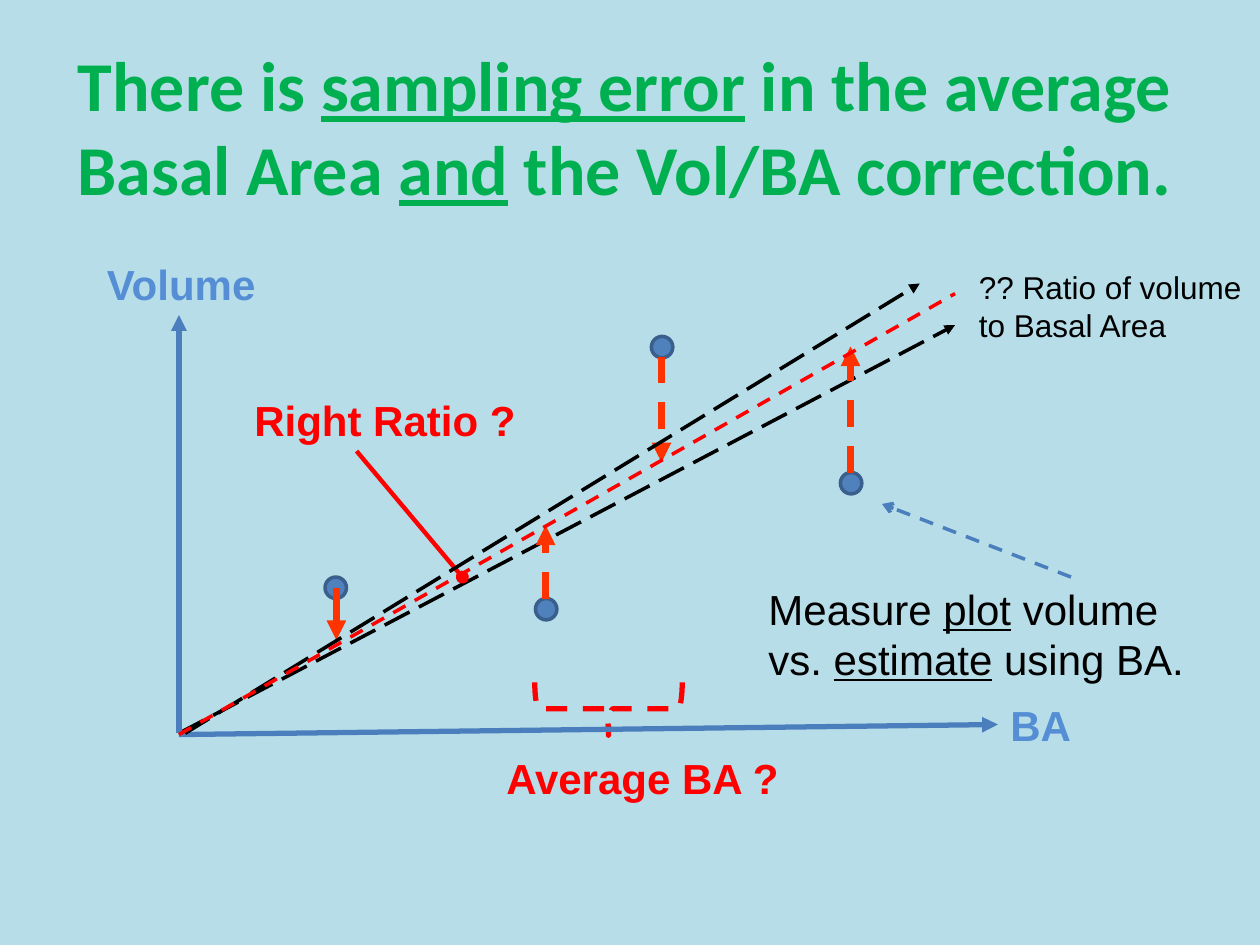
import pptx
import pptx.util
import pptx.dml.color
import pptx.enum.dml
import pptx.enum.shapes
import pptx.enum.text
import pptx.oxml.ns
import lxml.etree

Inches = pptx.util.Inches
Pt = pptx.util.Pt
Dash = pptx.enum.dml.MSO_LINE
Shape = pptx.enum.shapes.MSO_SHAPE
Align = pptx.enum.text.PP_ALIGN
Anchor = pptx.enum.text.MSO_ANCHOR
rgb = pptx.dml.color.RGBColor.from_string
qn = pptx.oxml.ns.qn

theme = {
    "back": rgb("B7DEE8"), "title": rgb("00B050"), "label": rgb("558ED5"),
    "axis": rgb("4B7EBC"), "dot": rgb("4F81BD"), "rim": rgb("3A5F8C"),
    "error": rgb("FF3300"), "red": rgb("FF0000"), "black": rgb("000000"),
    "head": Pt(40), "body": Pt(24), "small": Pt(18),
}

deck = pptx.Presentation()
deck.slide_width, deck.slide_height = Inches(10), Inches(7.5)
slide = deck.slides.add_slide(deck.slide_layouts[6])
slide.background.fill.solid()
slide.background.fill.fore_color.rgb = theme["back"]


def add_text(text, box, size="body", color="black", bold=False, font="Arial",
             align=Align.LEFT, anchor=Anchor.TOP):
    frame = slide.shapes.add_textbox(*map(Inches, box)).text_frame
    frame.word_wrap = True
    frame.vertical_anchor = anchor
    para = frame.paragraphs[0]
    para.alignment = align
    for row, line in enumerate(text.split("\n")):
        if row:
            para.add_line_break()
        for i, part in enumerate(line.split("_")):
            if part:
                run = para.add_run()
                run.text = part
                run.font.name = font
                run.font.size = theme[size]
                run.font.color.rgb = theme[color]
                run.font.bold = bold
                run.font.underline = i % 2 == 1


def add_line(start, end, color, width, dash=None, tip=None):
    line = slide.shapes.add_connector(
        pptx.enum.shapes.MSO_CONNECTOR.STRAIGHT, *map(Inches, start + end))
    line.line.color.rgb = theme[color]
    line.line.width = Pt(width)
    if dash:
        line.line.dash_style = dash
    if tip:
        lxml.etree.SubElement(line.line._get_or_add_ln(), qn("a:tailEnd"), type=tip)
    lxml.etree.SubElement(line._element.spPr, qn("a:effectLst"))


add_text("There is _sampling error_ in the average Basal Area _and_ the Vol/BA correction.",
         (0.33, 0.25, 9.25, 1.5), size="head", color="title", bold=True,
         font="Calibri", align=Align.CENTER, anchor=Anchor.MIDDLE)

add_line((1.42, 5.82), (7.58, 2.58), "black", 2, Dash.LONG_DASH, "triangle")

side = 0.17
for x, y in [(2.58, 4.58), (4.25, 4.75), (6.67, 3.75), (5.17, 2.67)]:
    dot = slide.shapes.add_shape(Shape.OVAL, *map(Inches, (x, y, side, side)))
    dot.shadow.inherit = False
    dot.fill.solid()
    dot.fill.fore_color.rgb = theme["dot"]
    dot.line.color.rgb = theme["rim"]
    dot.line.width = Pt(2)

for x, top, end, dash in [(5.25, 2.83, 3.67, Dash.DASH), (6.75, 3.75, 2.75, Dash.DASH),
                          (4.33, 4.75, 4.17, Dash.DASH), (2.67, 4.67, 5.08, None)]:
    add_line((x, top), (x, end), "error", 3.75, dash, "triangle")

brace = slide.shapes.add_shape(Shape.LEFT_BRACE, *map(Inches, (4.62, 5.04, 0.42, 1.17)))
brace.rotation = 270
brace.shadow.inherit = False
brace.fill.background()
brace.line.color.rgb = theme["red"]
brace.line.width = Pt(3)
brace.line.dash_style = Dash.DASH

add_text("Measure _plot_ volume \nvs. _estimate_ using BA.", (6, 4.58, 3.75, 0.91))
add_text("?? Ratio of volume to Basal Area", (7.67, 2.08, 2.33, 0.71), size="small")
for text, box, color in [("Average BA ?", (3.92, 5.92, 2.5, 0.51), "red"),
                         ("Right Ratio ?", (1.92, 3.08, 2.58, 0.51), "red"),
                         ("Volume", (0.75, 2, 1.67, 0.5), "label"),
                         ("BA", (7.92, 5.5, 1.67, 0.5), "label")]:
    add_text(text, box, color=color, bold=True)

add_line((8.5, 4.58), (7, 4), "axis", 2, Dash.DASH, "arrow")
add_line((2.83, 3.58), (3.67, 4.58), "red", 2.5, tip="oval")
add_line((1.42, 5.82), (1.42, 2.5), "axis", 3, tip="triangle")
add_line((1.42, 5.83), (7.92, 5.75), "axis", 3, tip="triangle")
add_line((1.47, 5.82), (7.3, 2.25), "black", 2, Dash.LONG_DASH, "triangle")
add_line((1.42, 5.83), (7.58, 2.33), "red", 2, Dash.DASH)

deck.save("out.pptx")
